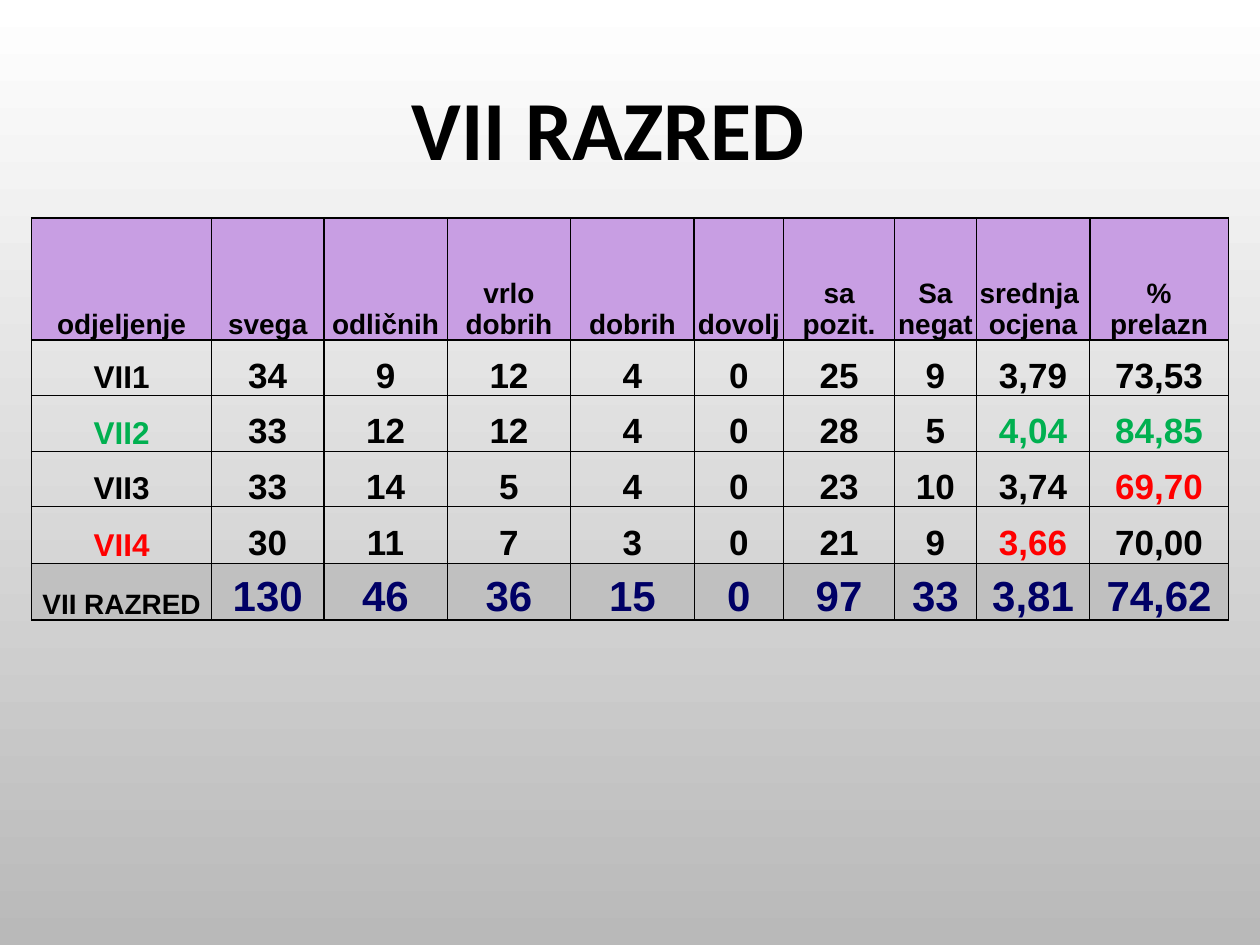
import dataclasses

import lxml.etree
import pptx
import pptx.dml.color
import pptx.enum.text
import pptx.oxml.ns
import pptx.util


@dataclasses.dataclass(frozen=True)
class Theme:
    """Colours, fonts and type sizes of the deck."""
    black: str = "000000"
    green: str = "00B050"
    red: str = "FF0000"
    navy: str = "000066"
    lilac: str = "C89EE3"
    grey: str = "C0C0C0"
    top: str = "FFFFFF"
    base: str = "B9B9B9"
    sans: str = "Arial"
    head: str = "Calibri"
    title: int = 48
    label: int = 16
    name: int = 18
    mark: int = 20
    total: int = 24
    thick: float = 1
    thin: float = 0.5


def shade(code):
    """Turn a hex code into a colour."""
    return pptx.dml.color.RGBColor.from_string(code)


class Deck:
    """Draw elements on the current slide, with lengths in percent of its size."""

    def __init__(self, theme):
        self.theme = theme
        self.file = pptx.Presentation()
        self.file.slide_width = pptx.util.Inches(10)
        self.file.slide_height = pptx.util.Inches(7.5)
        self.slide = self.file.slides.add_slide(self.file.slide_layouts[6])

    def wide(self, share):
        """Give a share of the slide's width."""
        return round(self.file.slide_width * share / 100)

    def high(self, share):
        """Give a share of the slide's height."""
        return round(self.file.slide_height * share / 100)

    def ground(self):
        """Fill the background from top to base."""
        fill = self.slide.background.fill
        fill.gradient()
        fill.gradient_angle = 270
        for stop, place, code in zip(fill.gradient_stops, (0, 1), (self.theme.top, self.theme.base)):
            stop.position = place
            stop.color.rgb = shade(code)

    def style(self, part, face, size, code):
        """Set the bold font of one paragraph."""
        font = part.font
        font.name, font.size, font.bold = face, pptx.util.Pt(size), True
        font.color.rgb = shade(code)

    def title(self, text, left, top, width, height):
        """Add the heading."""
        box = self.slide.shapes.add_textbox(
            self.wide(left), self.high(top), self.wide(width), self.high(height))
        frame = box.text_frame
        frame.word_wrap = True
        frame.auto_size = pptx.enum.text.MSO_AUTO_SIZE.SHAPE_TO_FIT_TEXT
        part = frame.paragraphs[0]
        part.text = text
        part.line_spacing = 1.07
        part.space_after = pptx.util.Pt(8)
        self.style(part, self.theme.head, self.theme.title, self.theme.black)

    def edge(self, cell, side, weight):
        """Draw one border of a cell."""
        mark = pptx.oxml.ns.qn
        line = lxml.etree.SubElement(
            cell._tc.get_or_add_tcPr(), mark(f"a:ln{side}"), w=str(pptx.util.Pt(weight)))
        fill = lxml.etree.SubElement(line, mark("a:solidFill"))
        lxml.etree.SubElement(fill, mark("a:srgbClr"), val=self.theme.black)

    def cell(self, cell, text, size, code, fill, lines):
        """Fill and style one cell."""
        cell.text = text
        cell.vertical_anchor = pptx.enum.text.MSO_ANCHOR.BOTTOM
        cell.margin_left = cell.margin_right = cell.margin_top = cell.margin_bottom = 0
        for part in cell.text_frame.paragraphs:
            part.alignment = pptx.enum.text.PP_ALIGN.CENTER
            self.style(part, self.theme.sans, size, code)
        for side, weight in zip("LRTB", lines):
            self.edge(cell, side, weight)
        if fill:
            cell.fill.solid()
            cell.fill.fore_color.rgb = shade(fill)
        else:
            cell.fill.background()

    def table(self, rows, left, top, widths, heights, tints):
        """Add the table of marks, with a header and a total row."""
        theme = self.theme
        last = len(rows) - 1
        grid = self.slide.shapes.add_table(
            len(rows), len(widths), self.wide(left), self.high(top),
            self.wide(sum(widths)), self.high(sum(heights))).table
        grid.first_row = grid.horz_banding = False
        for col, share in zip(grid.columns, widths):
            col.width = self.wide(share)
        for row, share in zip(grid.rows, heights):
            row.height = self.high(share)

        def beside(y, x):
            return theme.thick if y == 0 or x in (0, 1, 2, 7, 8, 10) else theme.thin

        def above(y, x):
            return theme.thick if y in (0, 1, last, last + 1) and (y, x) != (last, 1) else theme.thin

        for y, row in enumerate(rows):
            fill = {0: theme.lilac, last: theme.grey}.get(y)
            first = theme.label if y in (0, last) else theme.name
            rest = {0: theme.label, last: theme.total}.get(y, theme.mark)
            for x, text in enumerate(row):
                plain = theme.navy if y == last and x else theme.black
                lines = beside(y, x), beside(y, x + 1), above(y, x), above(y + 1, x)
                self.cell(grid.cell(y, x), text, rest if x else first,
                          tints.get((y, x), plain), fill, lines)


def main():
    """Build the slide of class results."""
    theme = Theme()
    deck = Deck(theme)
    deck.ground()
    rows = [
        ["odjeljenje", "svega", "odličnih", "vrlo\ndobrih", "dobrih", "dovolj",
         "sa pozit.", "Sa negat", "srednja \nocjena", "%\nprelazn"],
        ["VII1", "34", "9", "12", "4", "0", "25", "9", "3,79", "73,53"],
        ["VII2", "33", "12", "12", "4", "0", "28", "5", "4,04", "84,85"],
        ["VII3", "33", "14", "5", "4", "0", "23", "10", "3,74", "69,70"],
        ["VII4", "30", "11", "7", "3", "0", "21", "9", "3,66", "70,00"],
        ["VII RAZRED", "130", "46", "36", "15", "0", "97", "33", "3,81", "74,62"],
    ]
    best = dict.fromkeys([(2, 0), (2, 8), (2, 9)], theme.green)
    worst = dict.fromkeys([(3, 9), (4, 0), (4, 8)], theme.red)
    deck.table(rows, 2.5, 23.07,
               [14.3, 8.9, 9.8, 9.8, 9.8, 7.1, 8.8, 6.5, 9, 11],
               [12.93, 5.87, 5.87, 5.87, 6, 6], best | worst)
    deck.title("VII RAZRED", 31.7, 6.67, 36.6, 12.4)
    deck.file.save("out.pptx")


if __name__ == "__main__":
    main()
